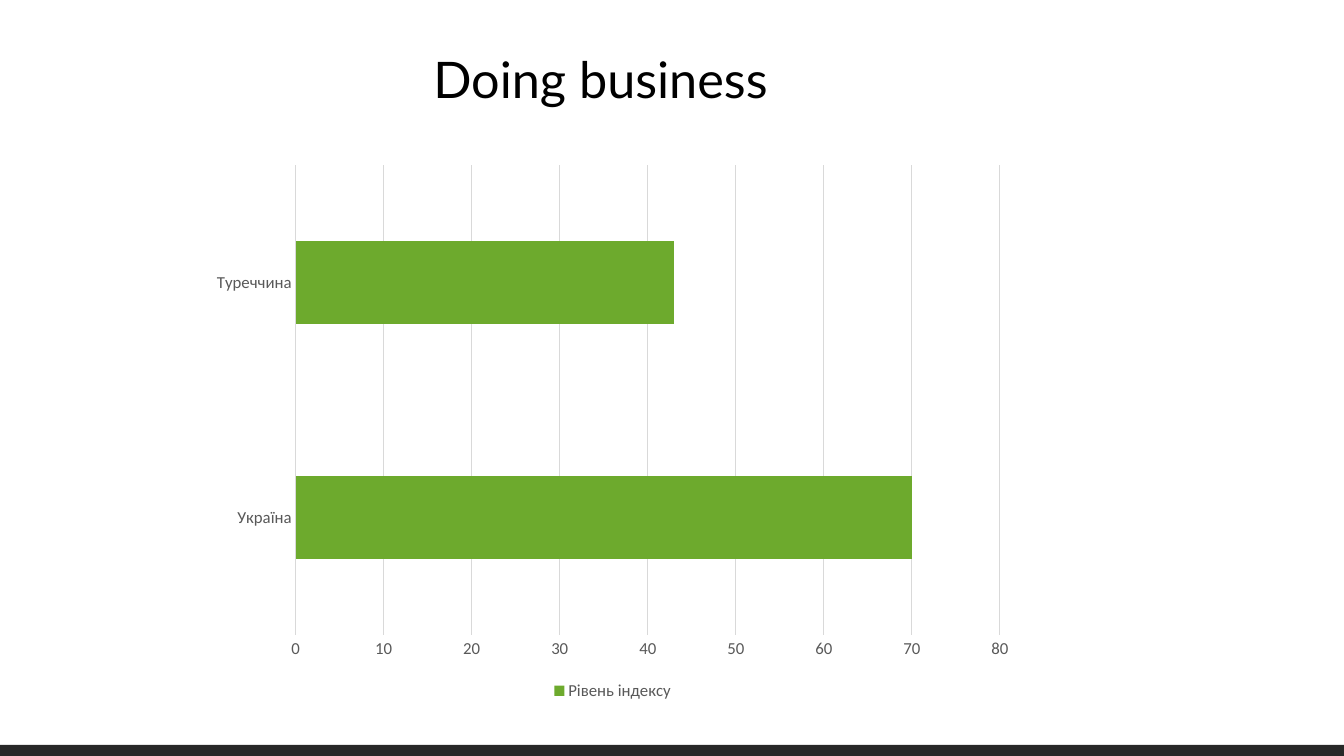
from pptx import Presentation
from pptx.chart.data import CategoryChartData
from pptx.dml.color import RGBColor
from pptx.enum.chart import XL_CHART_TYPE as ChartType, XL_LEGEND_POSITION as LegendPosition, XL_TICK_MARK as TickMark
from pptx.enum.shapes import MSO_SHAPE as Shape
from pptx.enum.text import MSO_AUTO_SIZE as AutoSize
from pptx.util import Cm, Pt

TITLE = "Doing business"
SERIES = "Рівень індексу"
SCORES = {"Україна": 70, "Туреччина": 43}

BLACK = RGBColor(0x00, 0x00, 0x00)
WHITE = RGBColor(0xFF, 0xFF, 0xFF)
GREEN = RGBColor(0x6D, 0xAA, 0x2D)
GRAY = RGBColor(0x59, 0x59, 0x59)
PALE = RGBColor(0xD9, 0xD9, 0xD9)
DARK = RGBColor(0x28, 0x28, 0x28)

PAGE_WIDTH, PAGE_HEIGHT = Cm(33.87), Cm(19.05)
FOOTER_HEIGHT = Cm(0.28)


def style_font(font, size, color, name="Calibri"):
    font.size = Pt(size)
    font.color.rgb = color
    font.name = name


def style_line(line):
    line.color.rgb = PALE
    line.width = Pt(0.75)


def add_title(page):
    box = page.shapes.add_textbox(Cm(10.67), Cm(1.09), Cm(9.53), Cm(1.8))
    frame = box.text_frame
    frame.word_wrap = False
    frame.auto_size = AutoSize.SHAPE_TO_FIT_TEXT
    span = frame.paragraphs[0].add_run()
    span.text = TITLE
    style_font(span.font, 36, BLACK, "Lato")


def add_index_chart(page):
    data = CategoryChartData()
    data.categories = list(SCORES)
    data.add_series(SERIES, list(SCORES.values()))
    chart = page.shapes.add_chart(
        ChartType.BAR_CLUSTERED, Cm(5.05), Cm(3.89), Cm(20.78), Cm(13.87), data
    ).chart
    style_font(chart.font, 10, BLACK)
    chart.has_title = False

    chart.has_legend = True
    chart.legend.position = LegendPosition.BOTTOM
    chart.legend.include_in_layout = False
    style_font(chart.legend.font, 12, GRAY)

    plot = chart.plots[0]
    plot.vary_by_categories = False
    plot.gap_width = 182
    bars = plot.series[0]
    bars.format.fill.solid()
    bars.format.fill.fore_color.rgb = GREEN

    for axis in (chart.category_axis, chart.value_axis):
        axis.major_tick_mark = axis.minor_tick_mark = TickMark.NONE
        style_font(axis.tick_labels.font, 12, GRAY)
    style_line(chart.category_axis.format.line)
    chart.value_axis.format.line.fill.background()
    chart.value_axis.has_major_gridlines = True
    style_line(chart.value_axis.major_gridlines.format.line)


def add_footer(page):
    footer = page.shapes.add_shape(
        Shape.RECTANGLE, 0, PAGE_HEIGHT - FOOTER_HEIGHT, PAGE_WIDTH, FOOTER_HEIGHT
    )
    footer.shadow.inherit = False
    footer.fill.solid()
    footer.fill.fore_color.rgb = DARK
    footer.line.fill.background()


def main():
    deck = Presentation()
    deck.slide_width, deck.slide_height = PAGE_WIDTH, PAGE_HEIGHT
    page = deck.slides.add_slide(deck.slide_layouts[6])
    page.background.fill.solid()
    page.background.fill.fore_color.rgb = WHITE
    add_index_chart(page)
    add_title(page)
    add_footer(page)
    deck.save("out.pptx")


if __name__ == "__main__":
    main()
